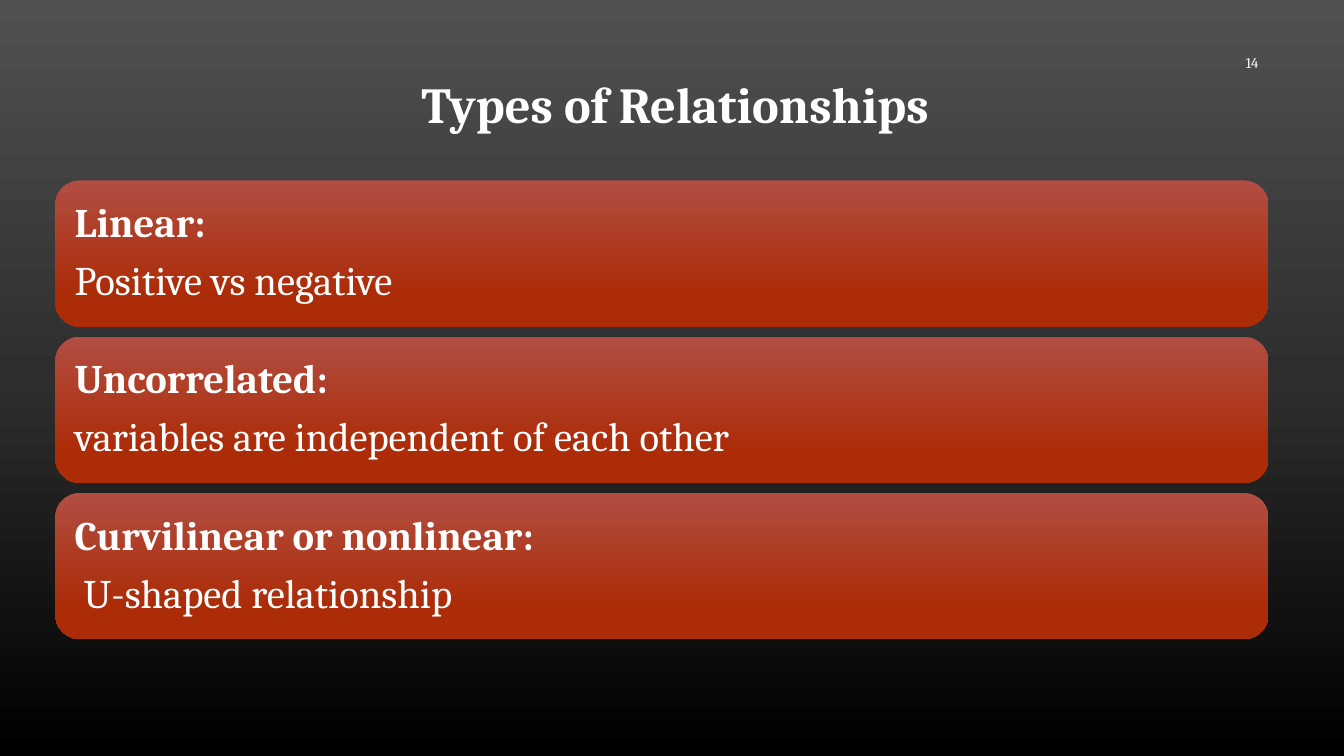
from copy import deepcopy
from dataclasses import dataclass

from lxml.etree import SubElement
from pptx import Presentation
from pptx.dml.color import RGBColor
from pptx.enum.shapes import MSO_SHAPE as Shape
from pptx.enum.text import MSO_ANCHOR as Anchor, MSO_AUTO_SIZE as AutoSize, PP_ALIGN as Align
from pptx.oxml.ns import qn
from pptx.util import Inches, Pt


@dataclass(frozen=True)
class Theme:
    font: str = "Cambria"
    text: str = "FFFFFF"
    backdrop: tuple = ((0, "515151"), (0.5, "2E2E2E"), (1, "000000"))
    card: tuple = ((0, "B14E42"), (0.78, "AC2C08"))
    title_size: float = 36
    card_size: float = 29
    number_size: float = 10.5
    cell: float = 0.1
    inset: float = 1.2


class Deck:
    """Draws styled elements on a slide, measured in grid columns and rows."""

    def __init__(self, theme):
        self.theme = theme
        self.presentation = Presentation()
        self.presentation.slide_width = Inches(13.33)
        self.presentation.slide_height = Inches(7.5)
        self.slide = self.presentation.slides.add_slide(self.presentation.slide_layouts[5])
        self.gradient(self.slide.background.fill, self.slide.element, theme.backdrop)

    def cells(self, *counts):
        return [Inches(count * self.theme.cell) for count in counts]

    def gradient(self, fill, owner, stops):
        fill.gradient()
        fill.gradient_angle = 270
        stop_list = owner.find(".//" + qn("a:gsLst"))
        for _ in stops[2:]:
            stop_list.append(deepcopy(stop_list[-1]))
        for stop, (position, color) in zip(fill.gradient_stops, stops):
            stop.position = position
            stop.color.rgb = RGBColor.from_string(color)

    def add_text(self, paragraph, text, size, align, bold=False):
        paragraph.alignment = align
        run = paragraph.add_run()
        run.text = text
        run.font.name = self.theme.font
        run.font.size = Pt(size)
        run.font.bold = bold
        run.font.color.rgb = RGBColor.from_string(self.theme.text)

    def title(self, text, *area):
        heading = self.slide.shapes.title
        heading.left, heading.top, heading.width, heading.height = self.cells(*area)
        frame = heading.text_frame
        frame.word_wrap = True
        frame.auto_size = AutoSize.SHAPE_TO_FIT_TEXT
        frame.vertical_anchor = Anchor.TOP
        self.add_text(frame.paragraphs[0], text, self.theme.title_size, Align.CENTER, True)

    def page_number(self, text, *area):
        frame = self.slide.shapes.add_textbox(*self.cells(*area)).text_frame
        frame.word_wrap = True
        frame.vertical_anchor = Anchor.MIDDLE
        self.add_text(frame.paragraphs[0], text, self.theme.number_size, Align.RIGHT)

    def card(self, term, meaning, *area):
        card = self.slide.shapes.add_shape(Shape.ROUNDED_RECTANGLE, *self.cells(*area))
        card.shadow.inherit = False
        card.line.fill.background()
        self.gradient(card.fill, card.element, self.theme.card)
        frame = card.text_frame
        frame.word_wrap = True
        frame.vertical_anchor = Anchor.MIDDLE
        frame.margin_left, frame.margin_top, frame.margin_right, frame.margin_bottom = self.cells(
            *[self.theme.inset] * 4)
        for paragraph, text, bold in (
            (frame.paragraphs[0], term, True),
            (frame.add_paragraph(), meaning, False),
        ):
            self.add_text(paragraph, text, self.theme.card_size, Align.LEFT, bold)
            paragraph.line_spacing = 0.9
            paragraph.space_after = Pt(0)
            after = paragraph._p.pPr.find(qn("a:spcAft"))
            after.remove(after[0])
            SubElement(after, qn("a:spcPct")).set("val", "35000")


def main():
    deck = Deck(Theme())
    deck.page_number("14", 95.8, 4.2, 30, 4)
    relationships = (
        ("Linear:", "Positive vs negative"),
        ("Uncorrelated:", "variables are independent of each other"),
        ("Curvilinear or nonlinear:", " U-shaped relationship"),
    )
    for row, (term, meaning) in enumerate(relationships):
        deck.card(term, meaning, 5.5, 17.9 + row * 15.5, 120.3, 14.5)
    deck.title("Types of Relationships", 20.2, 6.8, 93.5, 11.1)
    deck.presentation.save("out.pptx")


if __name__ == "__main__":
    main()
